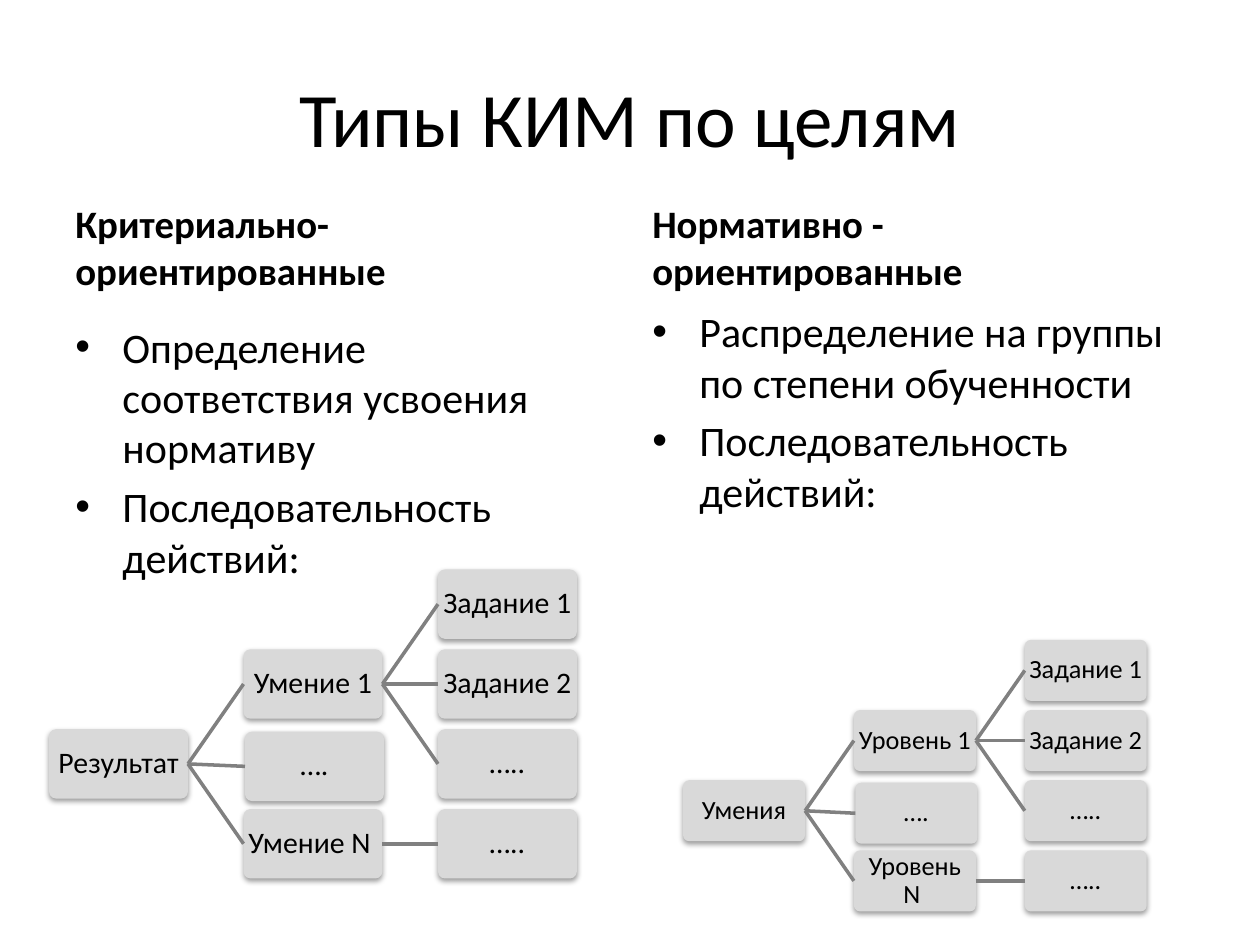
import pptx
import pptx.dml.color
import pptx.enum.shapes
import pptx.enum.text
import pptx.oxml
import pptx.oxml.ns
import pptx.util
from pptx.util import Cm, Pt

COLORS = {"text": "000000", "box": "D9D9D9", "branch": "808080"}
FONT = "Calibri"
ANCHOR = pptx.enum.text.MSO_ANCHOR
ALIGN = pptx.enum.text.PP_ALIGN
NS = pptx.oxml.ns.nsdecls("a")
SHADOW = (
    f'<a:effectLst {NS}><a:outerShdw blurRad="40000" dist="20000" dir="5400000" rotWithShape="0">'
    '<a:srgbClr val="000000"><a:alpha val="38000"/></a:srgbClr></a:outerShdw></a:effectLst>'
)
COLUMNS = [
    {
        "left": 1.27,
        "heading": "Критериально-ориентированные",
        "points": ["Определение соответствия усвоения нормативу", "Последовательность действий:"],
        "points_area": (1.27, 6.35, 10.92, 11.4),
        "tree": {"left": 0.99, "top": 11.48, "width": 2.8, "size": 17},
        "root": "Результат",
        "level": "Умение",
    },
    {
        "left": 12.9,
        "heading": "Нормативно - ориентированные",
        "points": ["Распределение на группы по степени обученности", "Последовательность действий:"],
        "points_area": (12.9, 6.04, 11.23, 10.97),
        "tree": {"left": 13.77, "top": 12.9, "width": 2.46, "size": 15},
        "root": "Умения",
        "level": "Уровень",
    },
]


def rgb(name):
    """Return the named colour."""
    return pptx.dml.color.RGBColor.from_string(COLORS[name])


def apply_format(target, values):
    """Set every attribute in values on target."""
    for attribute, value in values.items():
        setattr(target, attribute, value)


def write_paragraph(paragraph, wording, font, layout):
    """Fill a paragraph with one formatted run."""
    run = paragraph.add_run()
    run.text = wording
    apply_format(run.font, {"name": FONT, **font})
    run.font.color.rgb = rgb("text")
    apply_format(paragraph, layout)


def add_title(slide, wording):
    """Place and format the title."""
    title = slide.shapes.title
    apply_format(title, {"left": Cm(1.27), "top": Cm(0.76), "width": Cm(22.86), "height": Cm(3.18)})
    title.text_frame.vertical_anchor = ANCHOR.MIDDLE
    write_paragraph(title.text_frame.paragraphs[0], wording, {"size": Pt(44)}, {"alignment": ALIGN.CENTER})


def add_text_area(slide, area, anchor):
    """Add a wrapping text box and return its frame."""
    frame = slide.shapes.add_textbox(*map(Cm, area)).text_frame
    apply_format(frame, {"word_wrap": True, "vertical_anchor": anchor})
    return frame


def add_heading(slide, left, wording):
    """Add a bold column heading."""
    frame = add_text_area(slide, (left, 4.26, 11.23, 1.78), ANCHOR.BOTTOM)
    write_paragraph(frame.paragraphs[0], wording, {"size": Pt(22.2), "bold": True}, {"space_before": Pt(4.4)})


def add_points(slide, area, points):
    """Add a bulleted list."""
    frame = add_text_area(slide, area, ANCHOR.TOP)
    for index, point in enumerate(points):
        paragraph = frame.add_paragraph() if index else frame.paragraphs[0]
        write_paragraph(paragraph, point, {"size": Pt(24)}, {"space_before": Pt(4.8)})
        properties = paragraph._p.get_or_add_pPr()
        properties.set("marL", str(Cm(0.95)))
        properties.set("indent", str(-Cm(0.95)))
        properties.append(pptx.oxml.parse_xml(f'<a:buFont {NS} typeface="Arial"/>'))
        properties.append(pptx.oxml.parse_xml(f'<a:buChar {NS} char="•"/>'))


def add_node(slide, left, top, width, wording, size):
    """Add one rounded tree node."""
    kind = pptx.enum.shapes.MSO_SHAPE.ROUNDED_RECTANGLE
    node = slide.shapes.add_shape(kind, Cm(left), Cm(top), Cm(width), Cm(width / 2))
    node.adjustments[0] = 0.1
    node.fill.solid()
    node.fill.fore_color.rgb = rgb("box")
    node.line.fill.background()
    node._element.spPr.append(pptx.oxml.parse_xml(SHADOW))
    margins = dict.fromkeys(("margin_left", "margin_right", "margin_top", "margin_bottom"), Cm(0.05))
    apply_format(node.text_frame, {"word_wrap": True, "vertical_anchor": ANCHOR.MIDDLE, **margins})
    layout = {"alignment": ALIGN.CENTER, "line_spacing": 0.9}
    write_paragraph(node.text_frame.paragraphs[0], wording, {"size": Pt(size)}, layout)
    return node


def add_branch(slide, parent, child):
    """Join the right side of parent to the left side of child."""
    straight = pptx.enum.shapes.MSO_CONNECTOR.STRAIGHT
    branch = slide.shapes.add_connector(straight, 0, 0, 0, 0)
    branch.begin_connect(parent, 3)
    branch.end_connect(child, 1)
    branch.line.color.rgb = rgb("branch")
    branch.line.width = Pt(2)
    branch._element.spPr.append(pptx.oxml.parse_xml(f"<a:effectLst {NS}/>"))


def add_tree(slide, left, top, width, size, root, level):
    """Add a three-level tree on a regular grid."""
    nodes = {
        (0, 2): (root, None),
        (1, 1): (f"{level} 1", (0, 2)),
        (2, 0): ("Задание 1", (1, 1)),
        (2, 1): ("Задание 2", (1, 1)),
        (2, 2): ("…..", (1, 1)),
        (1, 2): ("….", (0, 2)),
        (1, 3): (f"{level} N ", (0, 2)),
        (2, 3): ("…..", (1, 3)),
    }
    nudges = {(1, 2): (0.03, 0.05)}
    placed = {}
    for cell, (wording, parent) in nodes.items():
        column, row = cell
        shift_x, shift_y = nudges.get(cell, (0, 0))
        x = left + column * width * 1.4 + shift_x
        y = top + row * width * 0.575 + shift_y
        placed[cell] = add_node(slide, x, y, width, wording, size)
        if parent:
            add_branch(slide, placed[parent], placed[cell])


def main():
    """Build and save the slide."""
    deck = pptx.Presentation()
    apply_format(deck, {"slide_width": Cm(25.4), "slide_height": Cm(19.05)})
    slide = deck.slides.add_slide(deck.slide_layouts[5])
    add_title(slide, "Типы КИМ по целям")
    for column in COLUMNS:
        add_heading(slide, column["left"], column["heading"])
        add_points(slide, column["points_area"], column["points"])
        add_tree(slide, root=column["root"], level=column["level"], **column["tree"])
    deck.save("out.pptx")


if __name__ == "__main__":
    main()
